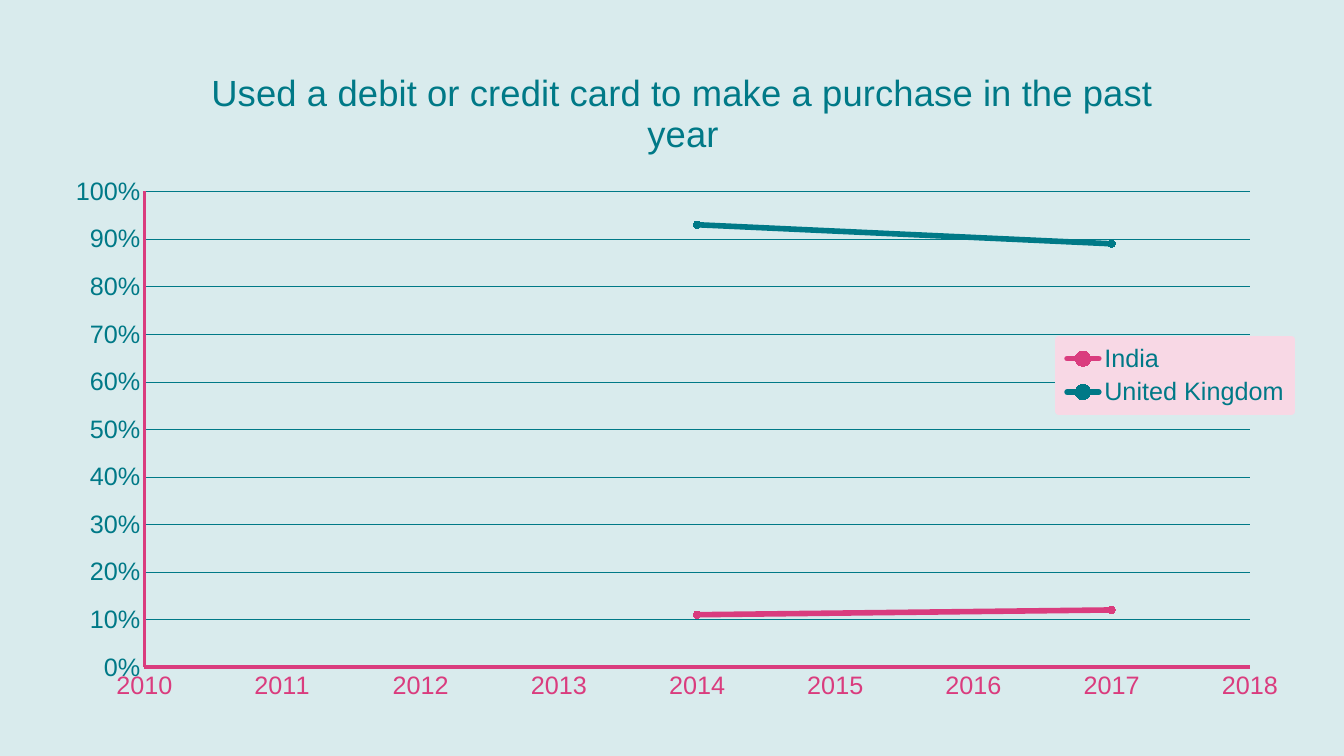
from lxml import etree
from pptx import Presentation, util as u
from pptx.chart.data import XyChartData
from pptx.dml.color import RGBColor
from pptx.enum import chart as ce
from pptx.oxml import parse_xml
from pptx.oxml.ns import nsdecls, qn

COLORS = {"teal": "007987", "pink": "DA3C7E", "back": "D9EBED", "legend": "F8D8E5"}
CARD_USE = {
    "India": ("pink", {2011: None, 2014: 0.11, 2017: 0.12}),
    "United Kingdom": ("teal", {2011: None, 2014: 0.93, 2017: 0.89}),
}


def rgb(name):
    return RGBColor.from_string(COLORS[name])


def place(parent, index, mode, **percents):
    """Give a chart part a manual layout, in percent of the chart."""
    for old in parent.findall(qn("c:layout")):
        parent.remove(old)
    layout = parse_xml(f"<c:layout {nsdecls('c')}><c:manualLayout/></c:layout>")
    values = {"layoutTarget": "inner"} if mode == "inner" else {}
    values |= {"xMode": "edge", "yMode": "edge"}
    values |= {tag: percent / 100 for tag, percent in percents.items()}
    for tag, value in values.items():
        etree.SubElement(layout[0], qn(f"c:{tag}")).set("val", str(value))
    parent.insert(index, layout)


# Slide and background
prs = Presentation()
prs.slide_width, prs.slide_height = u.Cm(33.87), u.Cm(19.05)
s = prs.slides.add_slide(prs.slide_layouts[6])
s.background.fill.solid()
s.background.fill.fore_color.rgb = rgb("back")

# Chart data
data = XyChartData(number_format="0%")
for country, (_, shares) in CARD_USE.items():
    points = data.add_series(country)
    for year, share in shares.items():
        points.add_data_point(year, share)

chart = s.shapes.add_chart(
    ce.XL_CHART_TYPE.XY_SCATTER_LINES,
    u.Cm(1.27), u.Cm(1.09), u.Cm(31.57), u.Cm(16.87), data).chart
chart.font.name, chart.font.size = "Arial", u.Pt(18)
chart.font.color.rgb = rgb("teal")
plot = chart.plots[0]
place(plot._element.getparent(), 0, "inner", x=7.5, y=22.15, w=88.25, h=71.05)

# Title
tf = chart.chart_title.text_frame
tf.text = "Used a debit or credit card to make a purchase in the past\nyear"
for p in tf.paragraphs:
    f = p.runs[0].font
    f.name, f.size, f.bold = "Arial", u.Pt(26), False
    f.color.rgb = rgb("teal")
place(chart.chart_title._element, 1, "outer", x=12.6, y=3.7)

# Axes
AXES = [
    (chart.category_axis, "pink", "0", False,
     {"minimum_scale": 2010, "maximum_scale": 2018, "major_unit": 1}),
    (chart.value_axis, "teal", "0%", True,
     {"minimum_scale": 0, "maximum_scale": 1, "major_unit": 0.1}),
]
for axis, color, number_format, grid, scale in AXES:
    for name, value in scale.items():
        setattr(axis, name, value)
    axis.has_major_gridlines = grid
    axis.major_tick_mark = axis.minor_tick_mark = ce.XL_TICK_MARK.NONE
    axis.format.line.width = u.Pt(2.5)
    axis.format.line.color.rgb = rgb("pink")
    labels = axis.tick_labels
    labels.number_format, labels.number_format_is_linked = number_format, False
    labels.font.name, labels.font.size = "Arial", u.Pt(18)
    labels.font.color.rgb = rgb(color)
grid_line = chart.value_axis.major_gridlines.format.line
grid_line.width = u.Pt(0.25)
grid_line.color.rgb = rgb("teal")

# Series, with the year without a share left empty
plot.vary_by_categories = False
for series, (color, _) in zip(plot.series, CARD_USE.values()):
    series.smooth = False
    series.format.line.width = u.Pt(4)
    series.marker.style, series.marker.size = ce.XL_MARKER_STYLE.CIRCLE, 5
    series.marker.format.fill.solid()
    for fmt in (series.format.line, series.marker.format.fill, series.marker.format.line):
        target = fmt.fore_color if hasattr(fmt, "fore_color") else fmt.color
        target.rgb = rgb(color)
    series._element.find(f"{qn('c:spPr')}/{qn('a:ln')}").set("cap", "rnd")
    for pt in list(series._element.iter(qn("c:pt"))):
        if pt.findtext(qn("c:v")) in ("None", "", None):
            pt.getparent().remove(pt)

# Legend over the plot
chart.has_legend = True
legend = chart.legend
legend.position, legend.include_in_layout = ce.XL_LEGEND_POSITION.RIGHT, True
legend.font.name, legend.font.size = "Arial", u.Pt(18)
legend.font.color.rgb = rgb("teal")
place(legend._element, 1, "outer", x=80.5, y=44.25)
fill = f'<a:solidFill><a:srgbClr val="{COLORS["legend"]}"/></a:solidFill>'
legend._element.find(qn("c:overlay")).addnext(parse_xml(
    f'<c:spPr {nsdecls("c", "a")}>{fill}<a:ln w="63500">{fill}<a:round/></a:ln></c:spPr>'))

prs.save("out.pptx")
